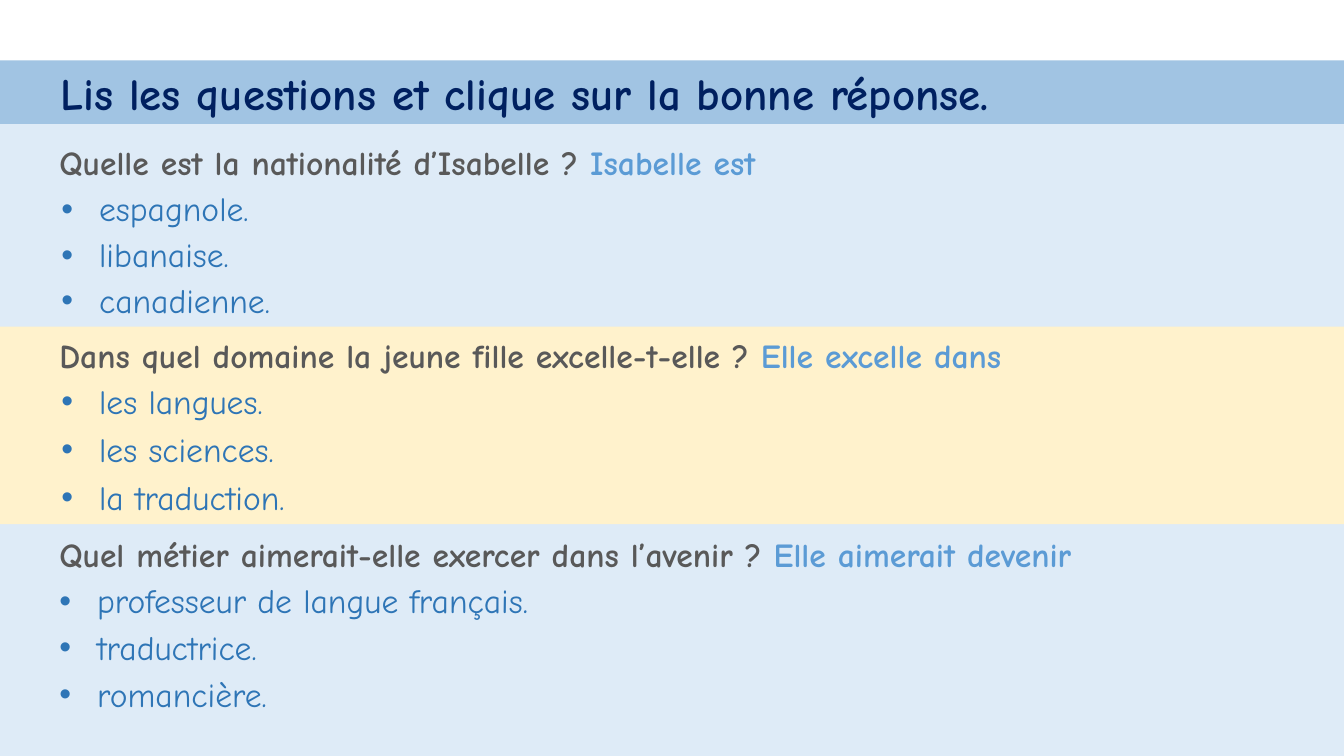
import pptx
import pptx.util
import pptx.dml.color
import pptx.enum.shapes
import pptx.enum.text
import pptx.oxml
import pptx.oxml.ns

Pt = pptx.util.Pt

# Content
TITLE = "Lis les questions et clique sur la bonne réponse."
# Each block: band (colour, top, height), question (top, width), options
# (left, first top, pitch), then each option with its box width
BLOCKS = [
    {"band": ("blue", 88.6, 144.7), "question_box": (97.9, 690.5),
     "question": "Quelle est la nationalité d’Isabelle ? ", "answer": "Isabelle est",
     "options_at": (0.7, 131, 32.8),
     "options": [("espagnole.", 232.6), ("libanaise.", 232.6), ("canadienne.", 203.8)]},
    {"band": ("yellow", 229.7, 144.7), "question_box": (235.4, 753.1),
     "question": "Dans quel domaine la jeune fille excelle-t-elle ? ", "answer": "Elle excelle dans",
     "options_at": (0.7, 268.5, 34.2),
     "options": [("les langues.", 263.5), ("les sciences.", 241.9), ("la traduction.", 241.9)]},
    {"band": ("blue", 373, 167), "question_box": (378, 825.8),
     "question": "Quel métier aimerait-elle exercer dans l’avenir ? ", "answer": "Elle aimerait devenir",
     "options_at": (-0.7, 411, 33.5),
     "options": [("professeur de langue français.", 521.3), ("traductrice.", 241.9), ("romancière.", 301.7)]},
]
COLORS = {"header": "A1C4E3", "blue": "DEEBF7", "yellow": "FFF2CC", "title": "002060",
          "question": "595959", "answer": "5B9BD5", "option": "2E75B6"}
FONT = "Comic Neue"
SLIDE_WIDTH, SLIDE_HEIGHT = 960, 540
BOX_HEIGHT = 36
TEXT_INDENT, OPTION_INDENT, BULLET_HANG = 36, 63, 27


def color(name):
    return pptx.dml.color.RGBColor.from_string(COLORS[name])


def fill_shape(shape, name):
    shape.fill.solid()
    shape.fill.fore_color.rgb = color(name)
    shape.line.fill.background()


def format_paragraph(paragraph, size, bold, name):
    paragraph.alignment = pptx.enum.text.PP_ALIGN.LEFT
    paragraph.font.name = FONT
    paragraph.font.size = Pt(size)
    paragraph.font.bold = bold
    if name:
        paragraph.font.color.rgb = color(name)


def set_indent(paragraph, left, first=0):
    properties = paragraph._p.get_or_add_pPr()
    properties.set("marL", str(Pt(left)))
    properties.set("indent", str(Pt(first)))
    return properties


def add_bullet(properties, name):
    namespace = pptx.oxml.ns.nsdecls("a")
    for xml in (f'<a:buClr {namespace}><a:srgbClr val="{COLORS[name]}"/></a:buClr>',
                f'<a:buFont {namespace} typeface="Arial"/>',
                f'<a:buChar {namespace} char="•"/>'):
        properties.append(pptx.oxml.parse_xml(xml))


def add_text_paragraph(slide, left, top, width):
    box = slide.shapes.add_textbox(Pt(left), Pt(top), Pt(width), Pt(BOX_HEIGHT))
    box.text_frame.word_wrap = True
    return box.text_frame.paragraphs[0]


presentation = pptx.Presentation()
presentation.slide_width, presentation.slide_height = Pt(SLIDE_WIDTH), Pt(SLIDE_HEIGHT)
slide = presentation.slides.add_slide(presentation.slide_layouts[5])

# Title band
title = slide.shapes.title
title.left, title.top, title.width, title.height = Pt(0), Pt(43.2), Pt(SLIDE_WIDTH), Pt(46)
fill_shape(title, "header")
title.text_frame.text = TITLE
title.text_frame.auto_size = pptx.enum.text.MSO_AUTO_SIZE.NONE
title.text_frame.vertical_anchor = pptx.enum.text.MSO_ANCHOR.MIDDLE
set_indent(title.text_frame.paragraphs[0], TEXT_INDENT)
format_paragraph(title.text_frame.paragraphs[0], 32, True, "title")

# Bands, lowest first so that each one overlaps the next
for block in reversed(BLOCKS):
    name, top, height = block["band"]
    band = slide.shapes.add_shape(pptx.enum.shapes.MSO_SHAPE.RECTANGLE,
                                  Pt(0), Pt(top), Pt(SLIDE_WIDTH), Pt(height))
    band.shadow.inherit = False
    fill_shape(band, name)

# Questions and answer options
for block in BLOCKS:
    top, width = block["question_box"]
    paragraph = add_text_paragraph(slide, -0.7, top, width)
    set_indent(paragraph, TEXT_INDENT)
    format_paragraph(paragraph, 24, True, None)
    for part in ("question", "answer"):
        run = paragraph.add_run()
        run.text = block[part]
        run.font.color.rgb = color(part)

    left, first_top, pitch = block["options_at"]
    for index, (text, width) in enumerate(block["options"]):
        paragraph = add_text_paragraph(slide, left, first_top + index * pitch, width)
        paragraph.text = text
        add_bullet(set_indent(paragraph, OPTION_INDENT, -BULLET_HANG), "option")
        format_paragraph(paragraph, 24, False, "option")

presentation.save("out.pptx")
